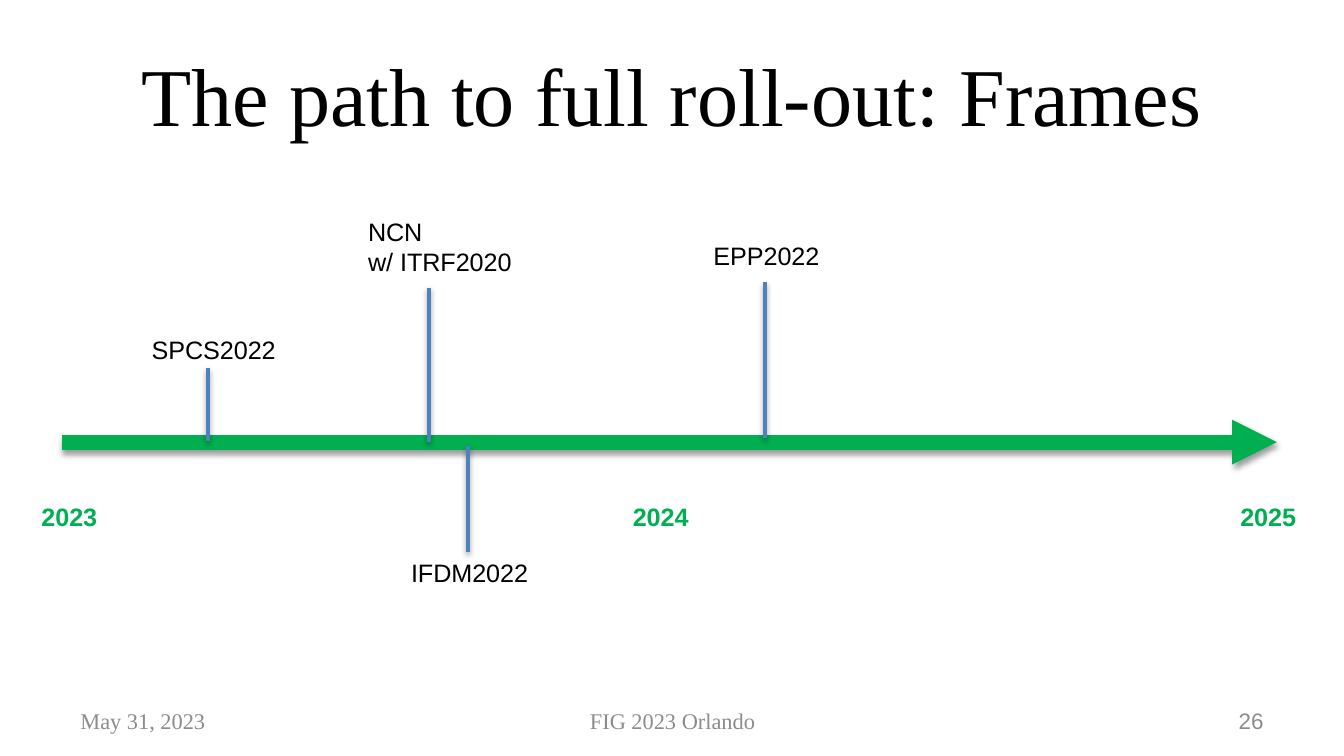
from dataclasses import dataclass

from lxml import etree
from pptx import Presentation
from pptx.dml.color import RGBColor
from pptx.enum.shapes import MSO_CONNECTOR
from pptx.enum.text import MSO_ANCHOR, PP_ALIGN
from pptx.oxml.ns import qn
from pptx.util import Inches, Pt

LEFT, CENTER, RIGHT = PP_ALIGN.LEFT, PP_ALIGN.CENTER, PP_ALIGN.RIGHT
MIDDLE, TOP = MSO_ANCHOR.MIDDLE, MSO_ANCHOR.TOP
STRAIGHT = MSO_CONNECTOR.STRAIGHT


@dataclass(frozen=True)
class Theme:
    serif: str = "Times New Roman"
    sans: str = "Arial"
    text: RGBColor = RGBColor(0x00, 0x00, 0x00)
    muted: RGBColor = RGBColor(0x8C, 0x8C, 0x8C)
    timeline: RGBColor = RGBColor(0x00, 0xB0, 0x50)
    marker: RGBColor = RGBColor(0x4F, 0x81, 0xBD)
    title_size: Pt = Pt(44)
    label_size: Pt = Pt(13.5)
    footer_size: Pt = Pt(12)


theme = Theme()


def write_text(shape, box, text, font_name, size, color,
               align=LEFT, anchor=TOP, bold=False, wrap=False):
    """Place a text shape and fill it, one paragraph per line."""
    shape.left, shape.top, shape.width, shape.height = map(Inches, box)
    frame = shape.text_frame
    frame.text = text
    frame.word_wrap = wrap
    frame.vertical_anchor = anchor
    for paragraph in frame.paragraphs:
        paragraph.alignment = align
        paragraph.font.name = font_name
        paragraph.font.size = size
        paragraph.font.color.rgb = color
        paragraph.font.bold = bold


def add_shadowed_line(slide, start, end, color, width, arrow=False):
    line = slide.shapes.add_connector(STRAIGHT, *map(Inches, (*start, *end)))
    line.line.color.rgb = color
    line.line.width = width
    if arrow:
        etree.SubElement(line.line._get_or_add_ln(), qn("a:tailEnd"), type="triangle")
    effects = etree.SubElement(line._element.spPr, qn("a:effectLst"))
    shadow = etree.SubElement(effects, qn("a:outerShdw"), blurRad=str(Pt(3.1)),
                              dist=str(Pt(1.6)), dir="5400000", rotWithShape="0")
    shadow_color = etree.SubElement(shadow, qn("a:srgbClr"), val="000000")
    etree.SubElement(shadow_color, qn("a:alpha"), val="38000")


presentation = Presentation()
presentation.slide_width = Inches(10)
presentation.slide_height = Inches(10 * 9 / 16)
slide = presentation.slides.add_slide(presentation.slide_layouts[5])

write_text(slide.shapes.title, (0.5, 0.23, 9, 0.94), "The path to full roll-out: Frames",
           theme.serif, theme.title_size, theme.text, CENTER, MIDDLE, wrap=True)

# Footer: left, width, text, font, alignment
footers = [
    (0.5, 2.33, "May 31, 2023", theme.serif, LEFT),
    (3.42, 3.17, "FIG 2023 Orlando", theme.serif, CENTER),
    (7.17, 2.33, "26", theme.sans, RIGHT),
]
for left, width, text, font_name, align in footers:
    footer = slide.shapes.add_textbox(0, 0, 0, 0)
    write_text(footer, (left, 5.21, width, 0.3), text, font_name,
               theme.footer_size, theme.muted, align, MIDDLE, wrap=True)

add_shadowed_line(slide, (0.46, 3.29), (9.5, 3.29), theme.timeline, Pt(8), arrow=True)

for year, left in (("2023", 0.21), ("2024", 4.61), ("2025", 9.13)):
    year_label = slide.shapes.add_textbox(0, 0, 0, 0)
    write_text(year_label, (left, 3.68, 0.62, 0.33), year, theme.sans,
               theme.label_size, theme.timeline, bold=True)

# Milestones: text, label box, marker x, marker start y, marker end y
milestones = [
    ("IFDM2022", (2.96, 4.1, 1.09, 0.33), 3.48, 4.11, 3.32),
    ("NCN\nw/ ITRF2020", (2.64, 1.56, 1.29, 0.56), 3.19, 3.29, 2.14),
    ("EPP2022", (5.21, 1.74, 1, 0.33), 5.69, 3.26, 2.1),
    ("SPCS2022", (1.03, 2.44, 1.14, 0.33), 1.55, 3.28, 2.74),
]
for text, box, x, start_y, end_y in milestones:
    add_shadowed_line(slide, (x, start_y), (x, end_y), theme.marker, Pt(2))
    milestone_label = slide.shapes.add_textbox(0, 0, 0, 0)
    write_text(milestone_label, box, text, theme.sans, theme.label_size, theme.text)

presentation.save("out.pptx")
